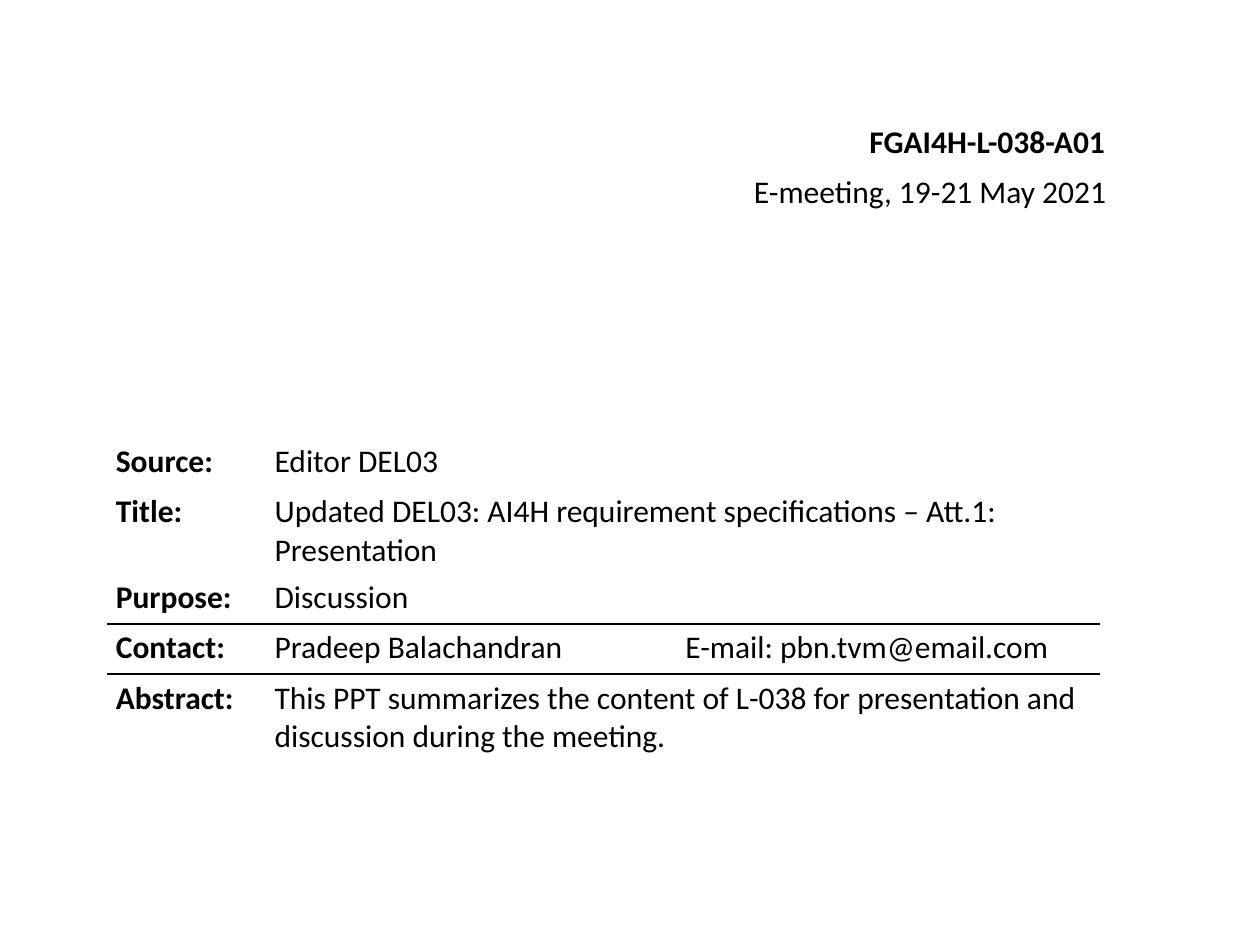
from lxml import etree
from pptx import Presentation
from pptx.dml.color import RGBColor
from pptx.enum.text import PP_ALIGN as Align
from pptx.oxml.ns import qn
from pptx.util import Inches, Pt

BLACK = RGBColor(0, 0, 0)
COLUMN_WIDTHS = [1.26, 3.26, 3.36]
ROW_HEIGHT = 0.4
ROWS = [
    ["Source:", "Editor DEL03"],
    ["Title:", "Updated DEL03: AI4H requirement specifications – Att.1: Presentation"],
    ["Purpose:", "Discussion"],
    ["Contact:", "Pradeep Balachandran", "E-mail: pbn.tvm@email.com"],
    ["Abstract:", "This PPT summarizes the content of L-038 for presentation "
                  "and discussion during the meeting."],
]
RULED_ROW = 3  # the contact row has a line above and below


def write(frame, text, bold=False, align=Align.LEFT):
    frame.word_wrap = True
    para = frame.paragraphs[0]
    para.alignment = align
    span = para.add_run()
    span.text = text
    span.font.name = "Calibri"
    span.font.size = Pt(18)
    span.font.bold = bold
    span.font.color.rgb = BLACK


def set_borders(cell, ruled_sides):
    properties = cell._tc.get_or_add_tcPr()
    for position, side in enumerate(["lnL", "lnR", "lnT", "lnB"]):
        line = etree.Element(qn("a:" + side), w=str(Pt(1.5)))
        if side in ruled_sides:
            fill = etree.SubElement(line, qn("a:solidFill"))
            etree.SubElement(fill, qn("a:srgbClr"), val=str(BLACK))
        else:
            etree.SubElement(line, qn("a:noFill"))
        properties.insert(position, line)


deck = Presentation()
deck.slide_width, deck.slide_height = Inches(10), Inches(7.5)
page = deck.slides.add_slide(deck.slide_layouts[6])

# Document number and meeting date
for text, left, top, width, bold in [
    ("FGAI4H-L-038-A01", 6.14, 0.92, 2.73, True),
    ("E-meeting, 19-21 May 2021", 4.25, 1.32, 4.63, False),
]:
    box = page.shapes.add_textbox(Inches(left), Inches(top), Inches(width), Inches(0.4))
    write(box.text_frame, text, bold=bold, align=Align.RIGHT)

# Document details
table = page.shapes.add_table(
    len(ROWS), len(COLUMN_WIDTHS), Inches(0.85), Inches(3.47),
    Inches(sum(COLUMN_WIDTHS)), Inches(ROW_HEIGHT * len(ROWS))).table
table.first_row = table.horz_banding = False
for column, width in zip(table.columns, COLUMN_WIDTHS):
    column.width = Inches(width)

for r, texts in enumerate(ROWS):
    table.rows[r].height = Inches(ROW_HEIGHT)
    ruled_sides = {RULED_ROW - 1: ["lnB"], RULED_ROW: ["lnT", "lnB"],
                   RULED_ROW + 1: ["lnT"]}.get(r, [])
    for c in range(len(COLUMN_WIDTHS)):
        cell = table.cell(r, c)
        cell.margin_left = cell.margin_right = Inches(0.07)
        cell.margin_top = cell.margin_bottom = Inches(0.04)
        cell.fill.background()
        set_borders(cell, ruled_sides)
        if c < len(texts):
            write(cell.text_frame, texts[c], bold=c == 0)
    if len(texts) == 2:
        table.cell(r, 1).merge(table.cell(r, 2))

deck.save("out.pptx")
